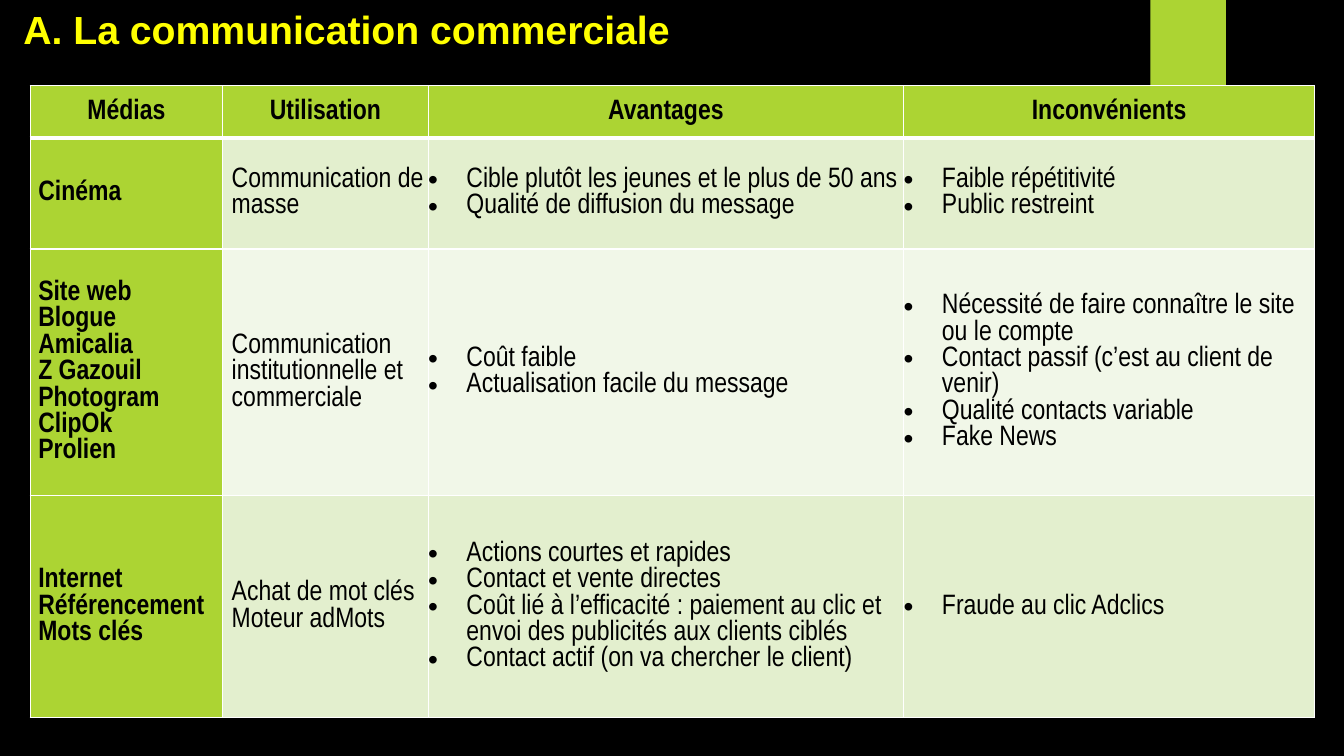
from dataclasses import dataclass
from lxml.etree import SubElement
from pptx import Presentation
from pptx.dml.color import RGBColor
from pptx.enum.shapes import MSO_SHAPE
from pptx.enum.text import MSO_ANCHOR, MSO_AUTO_SIZE, PP_ALIGN
from pptx.oxml.ns import qn
from pptx.util import Inches, Pt

WIDTH, HEIGHT = Inches(13.33), Inches(7.5)
BLACK = RGBColor(0x00, 0x00, 0x00)
WHITE = RGBColor(0xFF, 0xFF, 0xFF)
YELLOW = RGBColor(0xFF, 0xFF, 0x00)
GREEN = RGBColor(0xAC, 0xD4, 0x33)
BANDS = [RGBColor(0xE3, 0xEF, 0xCE), RGBColor(0xF1, 0xF7, 0xE8)]

COLUMN_SHARES = [1.91, 2.04, 4.72, 4.08]
ROW_SHARES = [0.52, 1.1, 2.45, 2.2]
HEADINGS = ["Médias", "Utilisation", "Avantages", "Inconvénients"]
MEDIA_ROWS = [
    [
        ["Cinéma"],
        ["Communication de masse"],
        ["Cible plutôt les jeunes et le plus de 50 ans",
         "Qualité de diffusion du message"],
        ["Faible répétitivité", "Public restreint"],
    ],
    [
        ["Site web", "Blogue", "Amicalia", "Z Gazouil", "Photogram", "ClipOk", "Prolien"],
        ["Communication institutionnelle et commerciale"],
        ["Coût faible", "Actualisation facile du message"],
        ["Nécessité de faire connaître le site ou le compte",
         "Contact passif (c’est au client de venir)",
         "Qualité contacts variable",
         "Fake News"],
    ],
    [
        ["Internet", "Référencement", "Mots clés"],
        ["Achat de mot clés Moteur adMots"],
        ["Actions courtes et rapides",
         "Contact et vente directes",
         "Coût lié à l’efficacité : paiement au clic et envoi des publicités aux clients ciblés",
         "Contact actif (on va chercher le client)"],
        ["Fraude au clic Adclics"],
    ],
]


@dataclass
class Box:
    left: int
    top: int
    width: int
    height: int

    def place(self):
        return self.left, self.top, self.width, self.height


def slide_box(left, top, width, height):
    return Box(int(WIDTH * left), int(HEIGHT * top), int(WIDTH * width), int(HEIGHT * height))


def add_span(para, text, font, size, color, bold):
    span = para.add_run()
    span.text = text
    span.font.name = font
    span.font.size = Pt(size)
    span.font.color.rgb = color
    span.font.bold = bold


def indent(para, left, bullet):
    properties = para._p.get_or_add_pPr()
    properties.set("marL", str(Inches(left)))
    properties.set("indent", str(-Inches(left) if bullet else 0))
    if bullet:
        SubElement(properties, qn("a:buFont")).set("typeface", "Arial")
        SubElement(properties, qn("a:buChar")).set("char", "•")


def border(cell, **widths):
    properties = cell._tc.get_or_add_tcPr()
    for side in "LRTB":
        line = SubElement(properties, qn(f"a:ln{side}"), w=str(Pt(widths.get(side, 1))))
        fill = SubElement(line, qn("a:solidFill"))
        SubElement(fill, qn("a:srgbClr")).set("val", str(WHITE))


def fill_cell(cell, row, column, lines):
    heading = row == 0
    border(cell, B=3 if heading else 1, T=3 if row == 1 else 1)
    cell.fill.solid()
    cell.fill.fore_color.rgb = GREEN if heading or column == 0 else BANDS[(row - 1) % 2]
    cell.margin_left = cell.margin_right = cell.margin_top = cell.margin_bottom = 0
    cell.vertical_anchor = MSO_ANCHOR.MIDDLE
    frame = cell.text_frame
    for number, text in enumerate(lines):
        para = frame.add_paragraph() if number else frame.paragraphs[0]
        if heading:
            para.alignment = PP_ALIGN.CENTER
            para.space_after = Pt(3)
        else:
            indent(para, [0.08, 0.09, 0.38, 0.38][column], column > 1)
        add_span(para, text, "Arial Narrow", 20, BLACK, heading or column == 0)


def draw_media_table(page, box):
    rows = [[[heading] for heading in HEADINGS]] + MEDIA_ROWS
    table = page.shapes.add_table(len(rows), len(HEADINGS), *box.place()).table
    for column, share in zip(table.columns, COLUMN_SHARES):
        column.width = int(box.width * share / sum(COLUMN_SHARES))
    for line, share in zip(table.rows, ROW_SHARES):
        line.height = int(box.height * share / sum(ROW_SHARES))
    for row, cells in enumerate(rows):
        for column, lines in enumerate(cells):
            fill_cell(table.cell(row, column), row, column, lines)


def draw_ribbon(page, box):
    ribbon = page.shapes.add_shape(MSO_SHAPE.RECTANGLE, *box.place())
    ribbon.shadow.inherit = False
    ribbon.fill.solid()
    ribbon.fill.fore_color.rgb = GREEN
    ribbon.line.fill.background()


def draw_title(page, box):
    frame = page.shapes.add_textbox(*box.place()).text_frame
    frame.word_wrap = False
    frame.auto_size = MSO_AUTO_SIZE.SHAPE_TO_FIT_TEXT
    add_span(frame.paragraphs[0], "A. La communication commerciale", "Arial", 28, YELLOW, True)


def main():
    deck = Presentation()
    deck.slide_width, deck.slide_height = WIDTH, HEIGHT
    page = deck.slides.add_slide(deck.slide_layouts[6])
    page.background.fill.solid()
    page.background.fill.fore_color.rgb = BLACK
    draw_ribbon(page, Box(Inches(11.41), 0, Inches(0.75), Inches(1.25)))
    draw_media_table(page, Box(Inches(0.3), Inches(0.85), Inches(12.74), Inches(6.27)))
    draw_title(page, slide_box(0.01, 0, 0.5, 0.08))
    deck.save("out.pptx")


if __name__ == "__main__":
    main()
